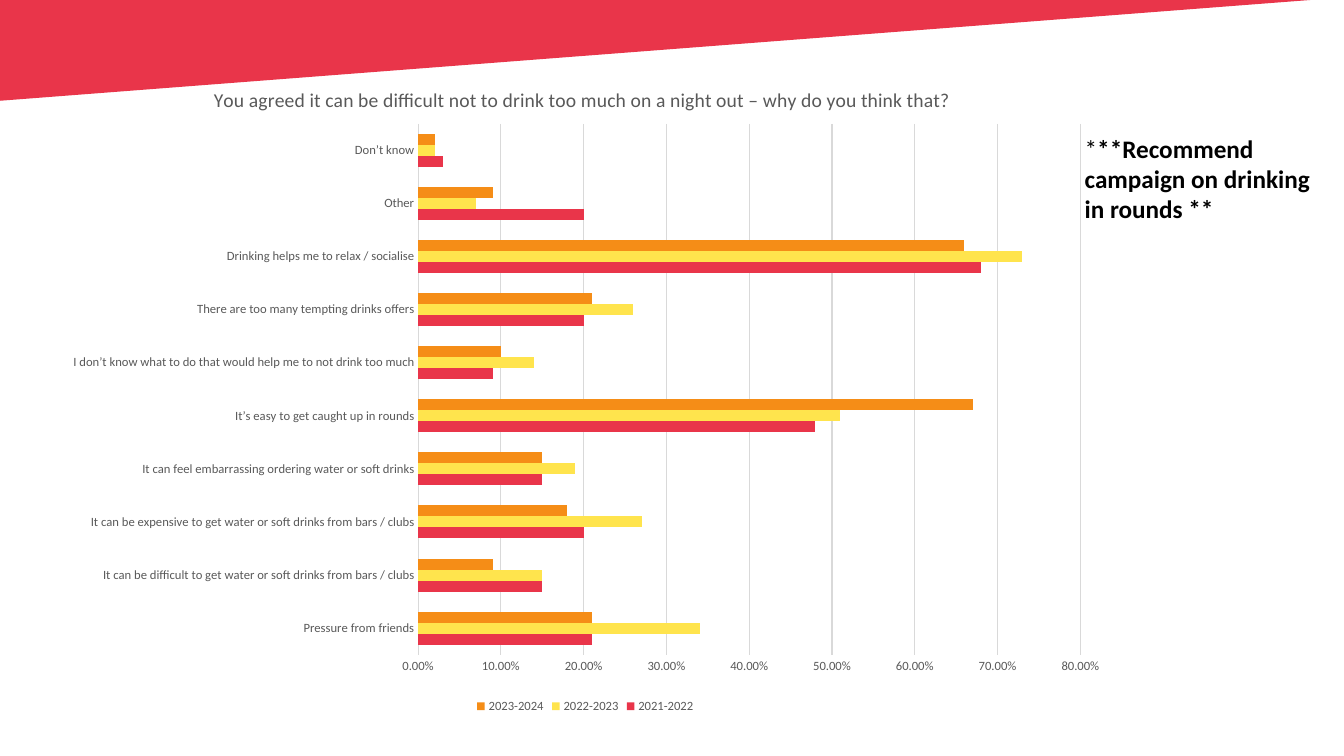
import pptx
import pptx.util
import pptx.chart.data
import pptx.dml.color
import pptx.enum.chart
import pptx.oxml
import pptx.oxml.ns

Inches, Pt = pptx.util.Inches, pptx.util.Pt
XL = pptx.enum.chart

FONT = "Calibri"
GREY, RULE = "595959", "D9D9D9"
BAND = [(0, 0), (0, 0.57), (13.33, 0.16), (13.33, 0)]
TITLE = "You agreed it can be difficult not to drink too much on a night out – why do you think that?"
REASONS = [
    "Pressure from friends",
    "It can be difficult to get water or soft drinks from bars / clubs",
    "It can be expensive to get water or soft drinks from bars / clubs",
    "It can feel embarrassing ordering water or soft drinks",
    "It’s easy to get caught up in rounds",
    "I don’t know what to do that would help me to not drink too much",
    "There are too many tempting drinks offers",
    "Drinking helps me to relax / socialise",
    "Other",
    "Don’t know",
]
YEARS = [
    ("2021-2022", "E9354A", (0.21, 0.15, 0.2, 0.15, 0.48, 0.09, 0.2, 0.68, 0.2, 0.03)),
    ("2022-2023", "FFE44D", (0.34, 0.15, 0.27, 0.19, 0.51, 0.14, 0.26, 0.73, 0.07, 0.02)),
    ("2023-2024", "F58D17", (0.21, 0.09, 0.18, 0.15, 0.67, 0.1, 0.21, 0.66, 0.09, 0.02)),
]
CALLOUT = [("*", False), ("**Recommend campaign on drinking in rounds **", True)]


def rgb(value):
    return pptx.dml.color.RGBColor.from_string(value)


def fill(sp, color):
    sp.fill.solid()
    sp.fill.fore_color.rgb = rgb(color)


def style(font, size, color, bold=False):
    for name, value in {"name": FONT, "size": Pt(size), "bold": bold}.items():
        setattr(font, name, value)
    font.color.rgb = rgb(color)


def line(fmt, color):
    fmt.line.color.rgb = rgb(color)
    fmt.line.width = Pt(0.75)


def place(parent, index, **marks):
    for old in parent.findall(pptx.oxml.ns.qn("c:layout")):
        parent.remove(old)
    body = "".join(f'<c:{k} val="{v}"/>' for k, v in marks.items())
    parent.insert(index, pptx.oxml.parse_xml(
        f'<c:layout {pptx.oxml.ns.nsdecls("c")}><c:manualLayout>{body}</c:manualLayout></c:layout>'))


def add_band(s):
    fb = s.shapes.build_freeform(*BAND[0], scale=Inches(1))
    fb.add_line_segments(BAND[1:], close=True)
    sp = fb.convert_to_shape()
    sp.shadow.inherit = False
    fill(sp, YEARS[0][1])
    sp.line.fill.background()


def add_reasons_chart(s):
    data = pptx.chart.data.CategoryChartData(number_format="0.00%")
    data.categories = REASONS
    for name, _, values in YEARS:
        data.add_series(name, values)
    box = [Inches(v) for v in (0.49, 0.56, 10.63, 6.56)]
    chart = s.shapes.add_chart(XL.XL_CHART_TYPE.BAR_CLUSTERED, *box, data).chart
    style(chart.font, 10, "000000")

    chart.has_title = True
    p = chart.chart_title.text_frame.paragraphs[0]
    r = p.add_run()
    r.text = TITLE
    style(r.font, 14, GREY)
    place(chart.chart_title._element, 1, xMode="edge", yMode="edge", x=0.15, y=0.04)

    chart.has_legend = True
    chart.legend.position = XL.XL_LEGEND_POSITION.BOTTOM
    chart.legend.include_in_layout = False
    style(chart.legend.font, 9, GREY)

    plot = chart.plots[0]
    plot.gap_width = 182
    plot.vary_by_categories = False
    for series, (_, color, _) in zip(plot.series, YEARS):
        fill(series.format, color)
        series.invert_if_negative = False

    cat, val = chart.category_axis, chart.value_axis
    for axis in (cat, val):
        axis.major_tick_mark = axis.minor_tick_mark = XL.XL_TICK_MARK.NONE
        style(axis.tick_labels.font, 9, GREY)
    cat.has_major_gridlines = False
    line(cat.format, RULE)
    val.format.line.fill.background()
    val.has_major_gridlines = True
    line(val.major_gridlines.format, RULE)
    for name, value in {"minimum_scale": 0, "maximum_scale": 0.8, "major_unit": 0.1}.items():
        setattr(val, name, value)
    val.tick_labels.number_format = "0.00%"
    val.tick_labels.number_format_is_linked = False

    plot_area = chart._chartSpace.find(".//" + pptx.oxml.ns.qn("c:plotArea"))
    place(plot_area, 0, layoutTarget="inner", xMode="edge", yMode="edge",
          x=0.344, y=0.102, w=0.618, h=0.803)


def add_callout(s):
    tf = s.shapes.add_textbox(Inches(10.66), Inches(1.27), Inches(2.5), Inches(1.31)).text_frame
    tf.word_wrap = True
    for text, bold in CALLOUT:
        r = tf.paragraphs[0].add_run()
        r.text = text
        style(r.font, 18, "000000", bold)


def main():
    prs = pptx.Presentation()
    prs.slide_width, prs.slide_height = Inches(13.33), Inches(7.5)
    s = prs.slides.add_slide(prs.slide_layouts[6])
    add_band(s)
    add_reasons_chart(s)
    add_callout(s)
    prs.save("out.pptx")


if __name__ == "__main__":
    main()
